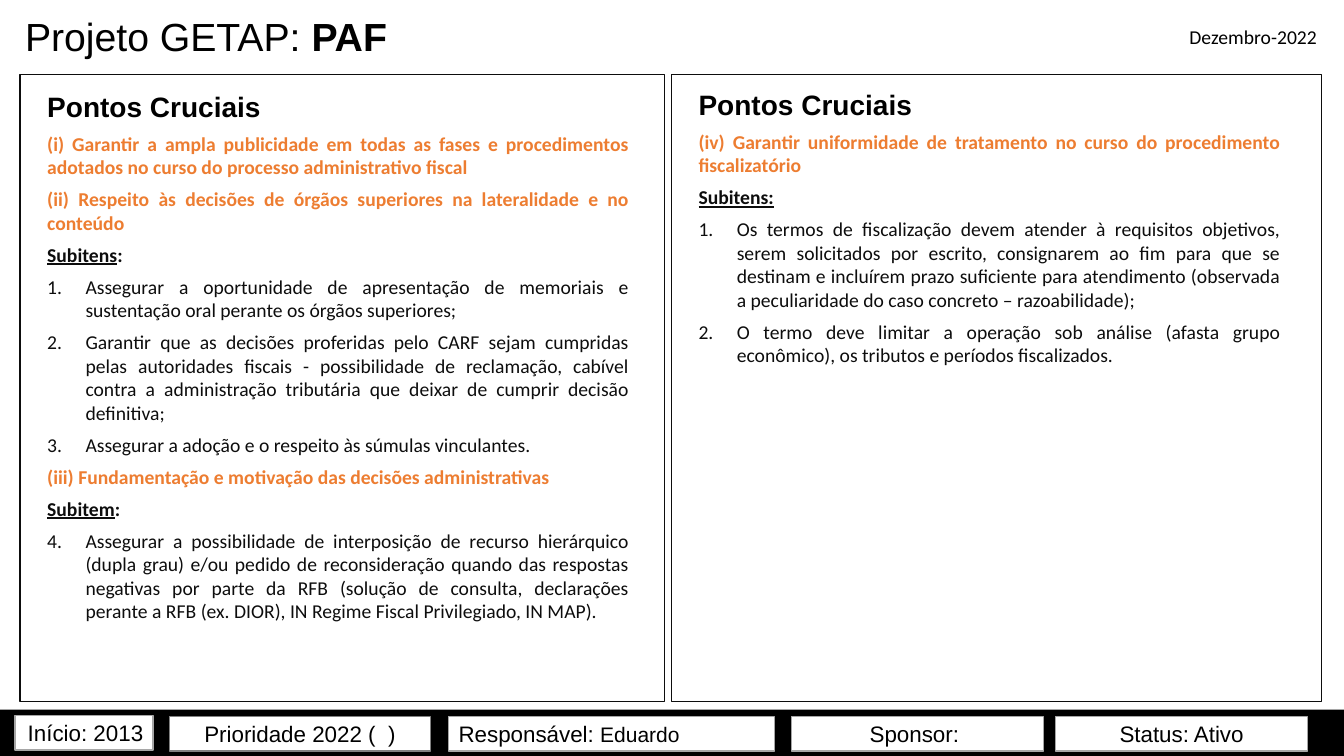
from pptx import Presentation
from pptx.dml.color import RGBColor
from pptx.enum.shapes import MSO_SHAPE
from pptx.enum.text import MSO_ANCHOR, PP_ALIGN
from pptx.util import Inches, Pt
from lxml import etree

RECT = MSO_SHAPE.RECTANGLE
TOP, MIDDLE, BOTTOM = MSO_ANCHOR.TOP, MSO_ANCHOR.MIDDLE, MSO_ANCHOR.BOTTOM
LEFT, CENTER, RIGHT = PP_ALIGN.LEFT, PP_ALIGN.CENTER, PP_ALIGN.RIGHT
JUSTIFY = PP_ALIGN.JUSTIFY
A_NS = "http://schemas.openxmlformats.org/drawingml/2006/main"

# Content: a paragraph is (style, text, start number of its list)
TITLE = ("Projeto GETAP: ", "PAF")
DATE = "Dezembro-2022"
LEFT_POINTS = [
    ("heading", "Pontos Cruciais", None),
    ("roman", " Garantir a ampla publicidade em todas as fases e procedimentos "
     "adotados no curso do processo administrativo fiscal ", 1),
    ("roman", " Respeito às decisões de órgãos superiores na lateralidade e no conteúdo", 1),
    ("label", ("Subitens", ":"), None),
    ("item", "Assegurar a oportunidade de apresentação de memoriais e "
     "sustentação oral perante os órgãos superiores;", 1),
    ("item", "Garantir que as decisões proferidas pelo CARF sejam cumpridas pelas "
     "autoridades fiscais - possibilidade de reclamação, cabível contra a administração "
     "tributária que deixar de cumprir decisão definitiva;", 1),
    ("item", "Assegurar a adoção e o respeito às súmulas vinculantes. ", 1),
    ("topic", "(iii) Fundamentação e motivação das decisões administrativas ", None),
    ("label", ("Subitem", ":"), None),
    ("item", "Assegurar a possibilidade de interposição de recurso hierárquico (dupla grau) "
     "e/ou pedido de reconsideração quando das respostas negativas por parte da RFB "
     "(solução de consulta, declarações perante a RFB (ex. DIOR), IN Regime Fiscal "
     "Privilegiado, IN MAP).", 4),
]
RIGHT_POINTS = [
    ("heading", "Pontos Cruciais", None),
    ("topic", "(iv) Garantir uniformidade de tratamento no curso do procedimento "
     "fiscalizatório", None),
    ("label", ("Subitens:", ""), None),
    ("item", "Os termos de fiscalização devem atender à requisitos objetivos, serem "
     "solicitados por escrito, consignarem ao fim para que se destinam e incluírem prazo "
     "suficiente para atendimento (observada a peculiaridade do caso concreto – "
     "razoabilidade);", 1),
    ("item", "O termo deve limitar a operação sob análise (afasta grupo econômico), "
     "os tributos e períodos fiscalizados. ", 1),
]
# Panels: left, width, top of the text, paragraphs
PANELS = [(0.2, 6.39, 0.84, LEFT_POINTS), (6.66, 6.45, 0.82, RIGHT_POINTS)]
# Footer: left, top, width, alignment, line colour, label, value
FOOTER = [
    (0.15, 7.1, 1.37, RIGHT, "box_line", "Início: 2013", ""),
    (1.68, 7.11, 2.59, CENTER, "box_line_dark", "Prioridade 2022 (  )", ""),
    (4.45, 7.11, 3.23, LEFT, "box_line", "Responsável: ", "Eduardo"),
    (7.85, 7.11, 2.5, CENTER, "box_line", "Sponsor: ", ""),
    (10.47, 7.11, 2.5, CENTER, "box_line", "Status: Ativo", ""),
]

THEME = {
    "color": {"black": "000000", "white": "FFFFFF", "ink": "0D0D0D", "accent": "ED7D31",
              "box_line": "A6A6A6", "box_line_dark": "808080"},
    "size": {"title": 28, "heading": 20, "footer": 16, "value": 15, "body": 14},
    "head_font": "Arial",
    "body_font": "Calibri",
}
HEAD, BODY = THEME["head_font"], THEME["body_font"]
# Paragraph styles: font, size, colour, bold, numbering scheme, hanging indent
STYLES = {
    "heading": (HEAD, "heading", "black", True, None, 0),
    "roman": (BODY, "body", "accent", True, "romanLcParenBoth", 0),
    "topic": (BODY, "body", "accent", True, None, 0),
    "label": (BODY, "body", "ink", True, None, 0),
    "item": (BODY, "body", "ink", False, "arabicPeriod", 0.38),
}


def color(name):
    return RGBColor.from_string(THEME["color"][name])


def add_rect(slide, left, top, width, height, fill=None, line=None):
    s = slide.shapes.add_shape(RECT, Inches(left), Inches(top), Inches(width), Inches(height))
    s.shadow.inherit = False
    if fill:
        s.fill.solid()
        s.fill.fore_color.rgb = color(fill)
    else:
        s.fill.background()
    if line:
        s.line.color.rgb = color(line)
        s.line.width = Pt(1)
    else:
        s.line.fill.background()
    return s


def add_text_box(slide, left, top, width, height, anchor):
    s = slide.shapes.add_textbox(Inches(left), Inches(top), Inches(width), Inches(height))
    return set_frame(s, anchor)


def set_frame(s, anchor):
    tf = s.text_frame
    tf.word_wrap = True
    tf.vertical_anchor = anchor
    return tf


def add_run(p, text, font, size, ink, bold=False, underline=False):
    r = p.add_run()
    r.text = text
    r.font.name = font
    r.font.size = Pt(THEME["size"][size])
    r.font.color.rgb = color(ink)
    r.font.bold = bold
    r.font.underline = underline


def set_numbering(p, scheme, start, hang):
    pPr = p._p.get_or_add_pPr()
    pPr.set("marL", str(Inches(hang)))
    pPr.set("indent", str(-Inches(hang)))
    bullet = etree.SubElement(pPr, f"{{{A_NS}}}buAutoNum", type=scheme)
    if start > 1:
        bullet.set("startAt", str(start))


def write_points(tf, points):
    for i, (style, text, start) in enumerate(points):
        p = tf.add_paragraph() if i else tf.paragraphs[0]
        font, size, ink, bold, scheme, hang = STYLES[style]
        p.alignment = JUSTIFY
        p.space_before = Pt(6)
        if scheme:
            set_numbering(p, scheme, start, hang)
        if style == "label":
            underlined, rest = text
            add_run(p, underlined, font, size, ink, bold, True)
            if rest:
                add_run(p, rest, font, size, ink, bold)
        else:
            add_run(p, text, font, size, ink, bold)


def main():
    prs = Presentation()
    prs.slide_width, prs.slide_height = Inches(13.33), Inches(7.5)
    slide = prs.slides.add_slide(prs.slide_layouts[6])

    # Title and date
    p = add_text_box(slide, 0.15, 0.05, 9.07, 0.59, BOTTOM).paragraphs[0]
    p.line_spacing = 0.9
    add_run(p, TITLE[0], HEAD, "title", "black")
    add_run(p, TITLE[1], HEAD, "title", "black", True)
    p = add_text_box(slide, 11.63, 0.16, 1.6, 0.41, MIDDLE).paragraphs[0]
    p.alignment = CENTER
    add_run(p, DATE, BODY, "body", "black")

    # Two framed panels of points
    for left, width, text_top, points in PANELS:
        add_rect(slide, left, 0.74, width, 6.22, line="ink")
        s = add_rect(slide, left + 0.17, text_top, 5.97, 5.84, fill="white")
        write_points(set_frame(s, TOP), points)

    # Footer bar and its boxes
    add_rect(slide, 0, 7.04, 13.33, 0.46, fill="black")
    for left, top, width, align, line, label, value in FOOTER:
        s = add_rect(slide, left, top, width, 0.34, fill="white", line=line)
        p = set_frame(s, MIDDLE).paragraphs[0]
        p.alignment = align
        add_run(p, label, HEAD, "footer", "black")
        if value:
            add_run(p, value, HEAD, "value", "black")

    prs.save("out.pptx")


if __name__ == "__main__":
    main()
